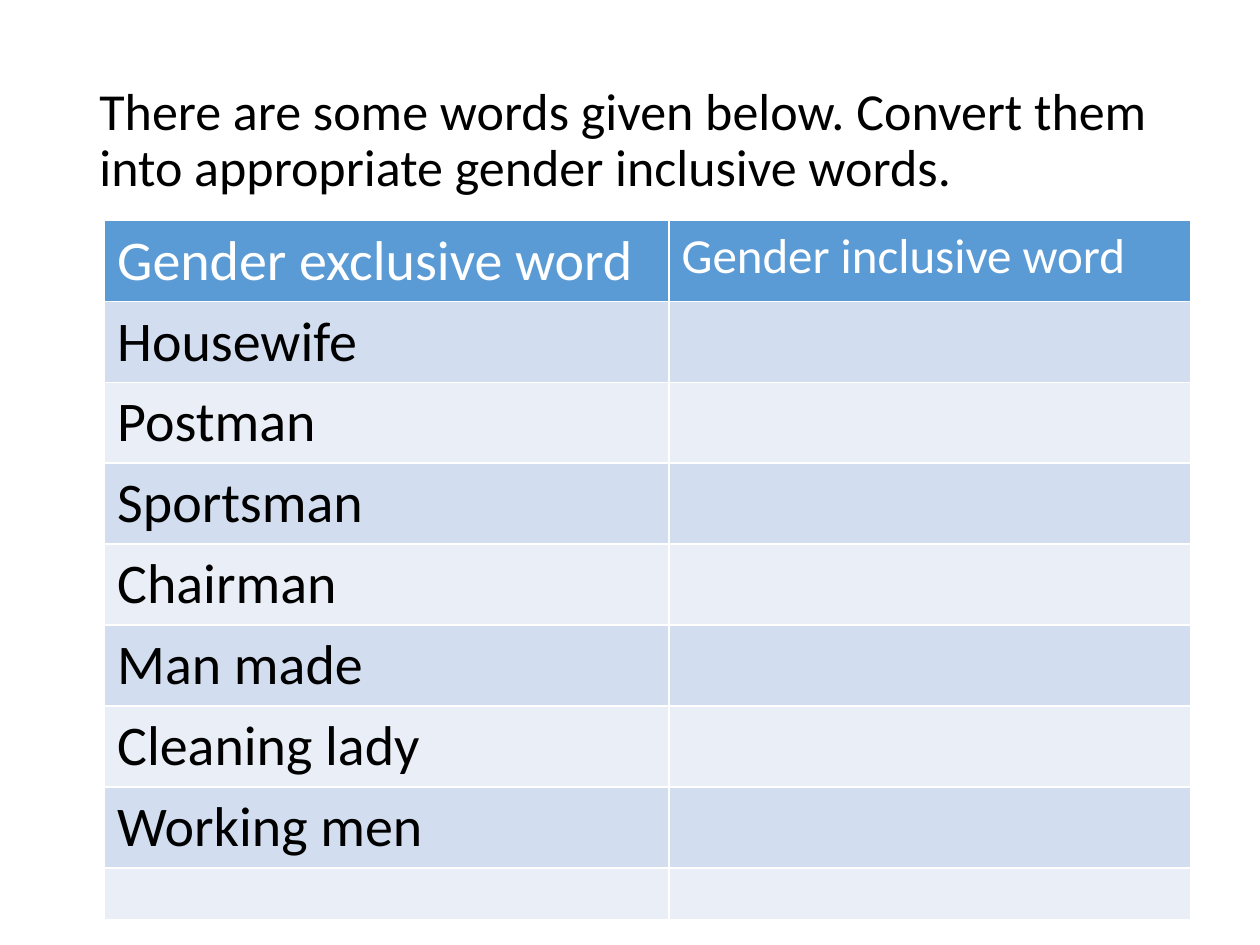
import pptx
import pptx.util
import pptx.dml.color
import pptx.enum.text

Inches, Pt = pptx.util.Inches, pptx.util.Pt
RGBColor = pptx.dml.color.RGBColor

BLACK = RGBColor(0x00, 0x00, 0x00)
WHITE = RGBColor(0xFF, 0xFF, 0xFF)
HEADER_BLUE = RGBColor(0x5B, 0x9B, 0xD5)
BANDS = (RGBColor(0xEA, 0xEF, 0xF7), RGBColor(0xD2, 0xDE, 0xEF))

FONT = "Calibri"
TITLE = ("There are some words given below. Convert them into "
         "appropriate gender inclusive words.")
HEADERS = ("Gender exclusive word", "Gender inclusive word")
WORDS = ("Housewife", "Postman", "Sportsman", "Chairman", "Man made",
         "Cleaning lady", "Working men", "")


def format_text(tf, size, color):
    for p in tf.paragraphs:
        for r in p.runs:
            r.font.name = FONT
            r.font.size = Pt(size)
            r.font.bold = False
            r.font.color.rgb = color


def add_title(slide, left, top, width, height):
    box = slide.shapes.add_textbox(left, top, width, height)
    tf = box.text_frame
    tf.word_wrap = True
    tf.vertical_anchor = pptx.enum.text.MSO_ANCHOR.MIDDLE
    tf.text = TITLE
    tf.paragraphs[0].line_spacing = 0.9
    format_text(tf, 29.7, BLACK)


def fill_cell(cell, text, size, color, fill):
    cell.fill.solid()
    cell.fill.fore_color.rgb = fill
    if text:
        cell.text_frame.text = text
        format_text(cell.text_frame, size, color)


def add_word_table(slide, left, top, width, height):
    """The table style supplies the white cell borders."""
    rows = len(WORDS) + 1
    table = slide.shapes.add_table(rows, 2, left, top, width, height).table
    table.columns[0].width = Inches(4.48)
    table.columns[1].width = width - Inches(4.48)

    last_height = Inches(0.41)
    for row in table.rows:
        row.height = (height - last_height) // (rows - 1)
    table.rows[rows - 1].height = last_height

    for col, (text, size) in enumerate(zip(HEADERS, (32, 28))):
        fill_cell(table.cell(0, col), text, size, WHITE, HEADER_BLUE)
    for row, word in enumerate(WORDS, start=1):
        for col, text in enumerate((word, "")):
            fill_cell(table.cell(row, col), text, 32, BLACK, BANDS[row % 2])


def main():
    prs = pptx.Presentation()
    prs.slide_width, prs.slide_height = Inches(10), Inches(7.5)
    slide = prs.slides.add_slide(prs.slide_layouts[6])
    add_title(slide, Inches(0.69), Inches(0.4), Inches(8.62), Inches(1.45))
    add_word_table(slide, Inches(0.83), Inches(1.75), Inches(8.62), Inches(5.55))
    prs.save("out.pptx")


if __name__ == "__main__":
    main()
